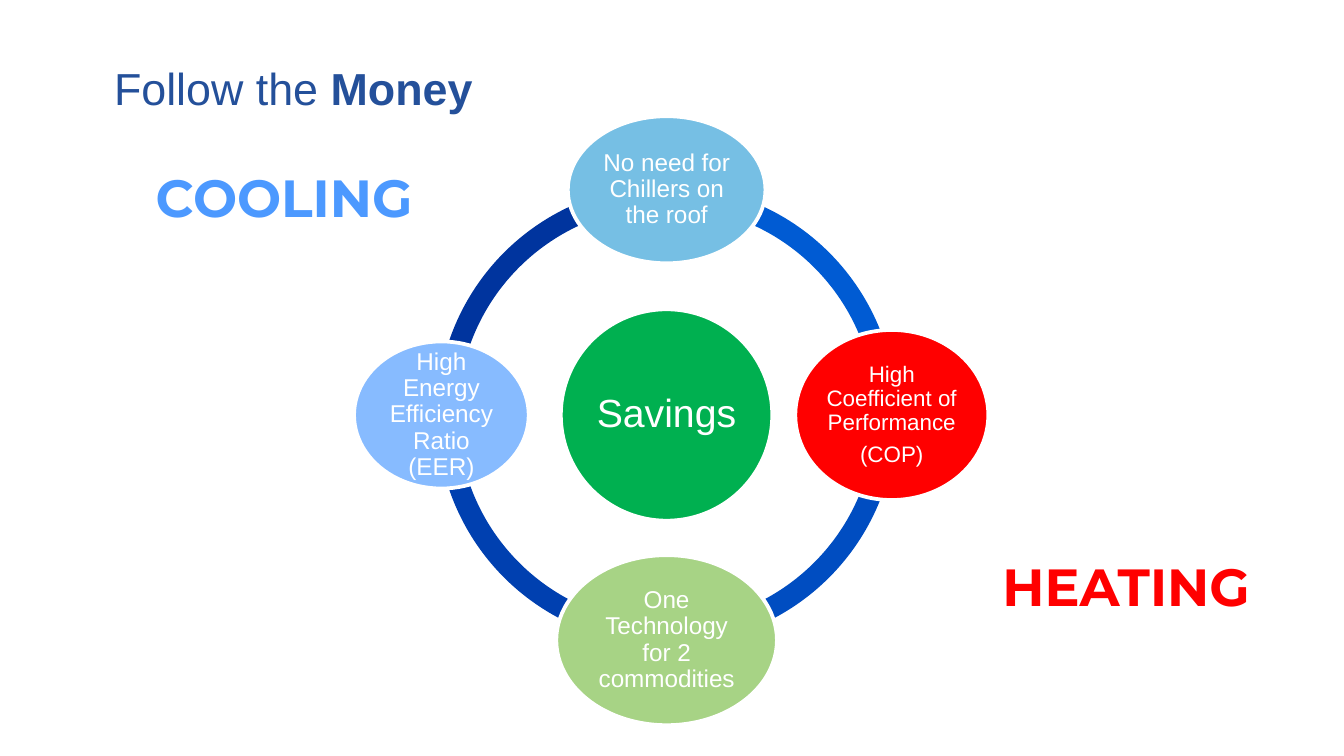
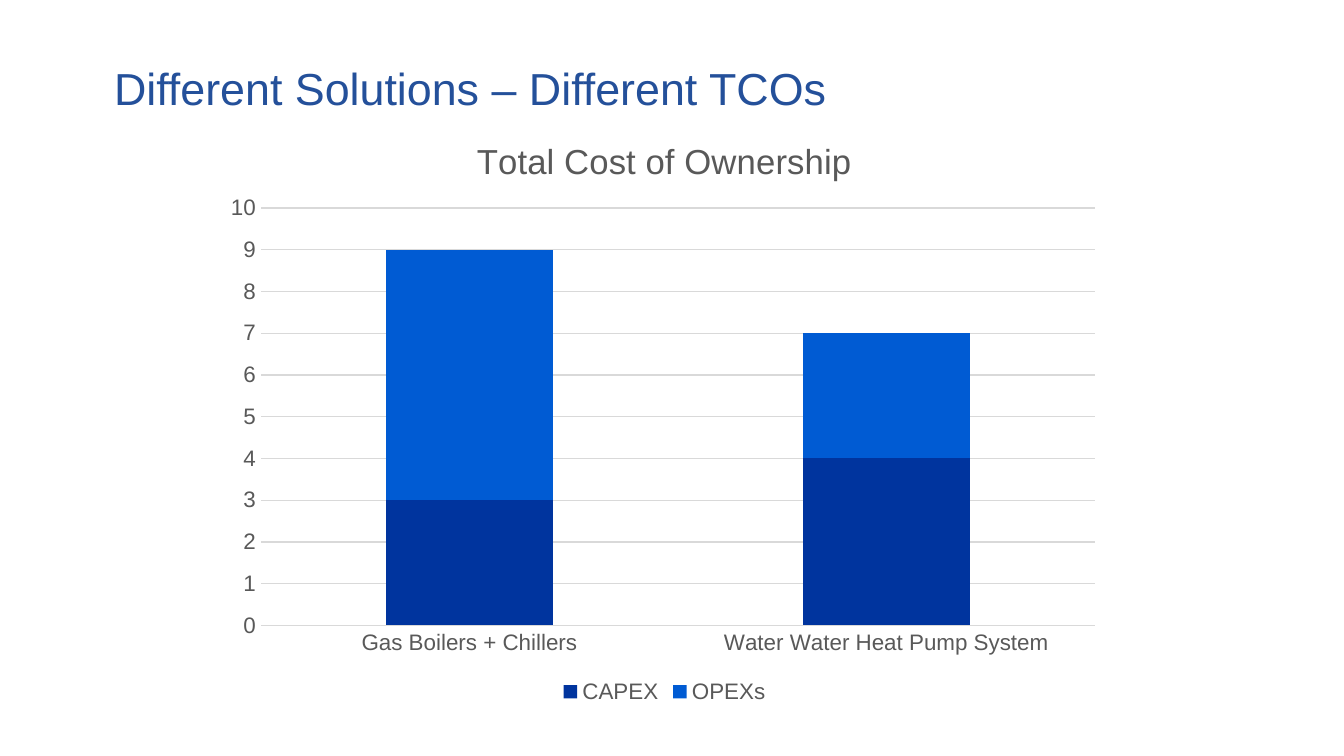
from math import cos, radians, sin

from lxml import etree
from pptx import Presentation
from pptx.chart.data import CategoryChartData
from pptx.dml.color import RGBColor
from pptx.enum.chart import XL_CHART_TYPE, XL_LEGEND_POSITION, XL_TICK_MARK
from pptx.enum.shapes import MSO_SHAPE
from pptx.enum.text import MSO_ANCHOR, PP_ALIGN
from pptx.oxml.ns import qn
from pptx.util import Inches, Pt

WIDE, HIGH = Inches(10), Inches(5.625)

WHITE = RGBColor(0xFF, 0xFF, 0xFF)
TITLE = RGBColor(0x24, 0x50, 0x9A)
NAVY = RGBColor(0x00, 0x34, 0x9E)
COBALT = RGBColor(0x00, 0x40, 0xB0)
ROYAL = RGBColor(0x00, 0x4D, 0xC1)
BLUE = RGBColor(0x00, 0x5B, 0xD3)
SKY = RGBColor(0x76, 0xBF, 0xE4)
PALE = RGBColor(0x87, 0xBB, 0xFF)
COOL = RGBColor(0x4C, 0x99, 0xFF)
RED = RGBColor(0xFF, 0x00, 0x00)
GREEN = RGBColor(0x00, 0xB0, 0x50)
LIME = RGBColor(0xA7, 0xD3, 0x85)
GREY = RGBColor(0x59, 0x59, 0x59)
RULE = RGBColor(0xD9, 0xD9, 0xD9)

BODY, HEAD = "Arial", "Montserrat"

# Boxes in percent of the slide: left, top, width, height
TITLE_BOX = (7.5, 6.6, 63.5, 10)
RING_BOX = (32.5, 24.5, 34.2, 60.8)
COOL_BOX = (10.6, 21, 22.8, 10.1)
HEAT_BOX = (73.6, 72.4, 22.8, 10.1)
CHART_BOX = (16.1, 14.9, 66.7, 78.9)

# Arcs: start angle in degrees, colour
ARCS = [(180, NAVY), (90, COBALT), (0, ROYAL), (270, BLUE)]
ORBIT = 0.49

# Nodes: angle, width and height as shares of the ring, colour, size, lines
NODES = [
    (-90, 0.43, 0.32, SKY, 13, ["No need for Chillers on the roof"]),
    (0, 0.42, 0.37, RED, 12, ["High Coefficient of Performance", "(COP)"]),
    (90, 0.48, 0.37, LIME, 13, ["One Technology for 2 commodities"]),
    (180, 0.38, 0.32, PALE, 13, ["High Energy Efficiency Ratio (EER)"]),
]


def place(box):
    """Turn percent of the slide into lengths."""
    left, top, width, height = box
    return (int(WIDE * left / 100), int(HIGH * top / 100),
            int(WIDE * width / 100), int(HIGH * height / 100))


def style(font, size, color, name=BODY, bold=False):
    font.size, font.name, font.bold = Pt(size), name, bold
    font.color.rgb = color


def add_run(para, text, *look, **more):
    run = para.add_run()
    run.text = text
    style(run.font, *look, **more)


def add_text(slide, box, runs, size, color, name=BODY):
    frame = slide.shapes.add_textbox(*place(box)).text_frame
    frame.word_wrap = True
    frame.vertical_anchor = MSO_ANCHOR.MIDDLE
    for text, bold in runs:
        add_run(frame.paragraphs[0], text, size, color, name, bold)


def add_slide(deck, runs):
    slide = deck.slides.add_slide(deck.slide_layouts[6])
    add_text(slide, TITLE_BOX, runs, 24, TITLE)
    return slide


def add_form(group, kind, box, color):
    form = group.shapes.add_shape(kind, *box)
    form.shadow.inherit = False
    form.fill.solid()
    form.fill.fore_color.rgb = color
    form.line.fill.background()
    return form


def add_node(group, mid, size, color, points, lines, inset=0.02):
    (mid_x, mid_y), (width, height) = mid, size
    box = [int(n) for n in (mid_x - width / 2, mid_y - height / 2, width, height)]
    node = add_form(group, MSO_SHAPE.OVAL, box, color)
    node.line.color.rgb = WHITE
    node.line.width = Pt(2)
    frame = node.text_frame
    frame.word_wrap = True
    frame.vertical_anchor = MSO_ANCHOR.MIDDLE
    frame.margin_left = frame.margin_right = Inches(inset)
    frame.margin_top = frame.margin_bottom = Inches(inset)
    for rank, line in enumerate(lines):
        para = frame.add_paragraph() if rank else frame.paragraphs[0]
        para.alignment = PP_ALIGN.CENTER
        para.line_spacing = 0.9
        para.space_after = Pt(points * 0.35)
        add_run(para, line, points, WHITE)


def add_ring(slide, box):
    left, top, side, _ = place(box)
    group = slide.shapes.add_group_shape()
    mid_x, mid_y = left + side / 2, top + side / 2

    # Quarter arcs; angles are stored in 60000ths of a degree
    for start, color in ARCS:
        arc = add_form(group, MSO_SHAPE.BLOCK_ARC, (left, top, side, side), color)
        arc.adjustments[0] = start * 0.6
        arc.adjustments[1] = (start + 90) % 360 * 0.6
        arc.adjustments[2] = 0.046

    # Hub, then the nodes around it
    add_node(group, (mid_x, mid_y), (side * 0.46, side * 0.46),
             GREEN, 21, ["Savings"], 0.03)
    for angle, width, height, color, points, lines in NODES:
        turn = radians(angle)
        mid = (mid_x + side * ORBIT * cos(turn), mid_y + side * ORBIT * sin(turn))
        add_node(group, mid, (side * width, side * height), color, points, lines)


def set_plot(chart, **shares):
    """Fix the inner plot area as shares of the chart."""
    area = chart.element.find(".//" + qn("c:plotArea"))
    for old in area.findall(qn("c:layout")):
        area.remove(old)
    layout = etree.Element(qn("c:layout"))
    area.insert(0, layout)
    manual = etree.SubElement(layout, qn("c:manualLayout"))
    parts = {"layoutTarget": "inner", "xMode": "edge", "yMode": "edge", **shares}
    for tag, value in parts.items():
        etree.SubElement(manual, qn("c:" + tag)).set("val", str(value))


def add_costs(slide, box):
    data = CategoryChartData()
    data.categories = ["Gas Boilers + Chillers", "Water Water Heat Pump System"]
    data.add_series("CAPEX", (3, 4))
    data.add_series("OPEXs", (6, 3))
    chart = slide.shapes.add_chart(
        XL_CHART_TYPE.COLUMN_STACKED, *place(box), data).chart
    chart.font.name, chart.font.size = BODY, Pt(10)

    # Title and legend
    chart.has_title = True
    add_run(chart.chart_title.text_frame.paragraphs[0],
            "Total Cost of Ownership", 18.6, GREY)
    chart.chart_title.include_in_layout = False
    chart.has_legend = True
    chart.legend.position = XL_LEGEND_POSITION.BOTTOM
    chart.legend.include_in_layout = False
    style(chart.legend.font, 12, GREY)

    # Columns
    plot = chart.plots[0]
    plot.gap_width, plot.overlap = 150, 100
    plot.vary_by_categories = False
    for series, color in zip(plot.series, (NAVY, BLUE)):
        series.format.fill.solid()
        series.format.fill.fore_color.rgb = color

    # Axes
    cats, vals = chart.category_axis, chart.value_axis
    for axis in (cats, vals):
        axis.major_tick_mark = axis.minor_tick_mark = XL_TICK_MARK.NONE
        style(axis.tick_labels.font, 12, GREY)
    vals.minimum_scale, vals.maximum_scale, vals.major_unit = 0, 10, 1
    vals.has_major_gridlines = True
    vals.format.line.fill.background()
    for line in (cats.format.line, vals.major_gridlines.format.line):
        line.color.rgb = RULE
        line.width = Pt(0.75)
    set_plot(chart, x=0.05, y=0.16, w=0.93, h=0.7)


def main():
    deck = Presentation()
    deck.slide_width, deck.slide_height = WIDE, HIGH

    money = add_slide(deck, [("Follow the ", False), ("Money", True)])
    add_ring(money, RING_BOX)
    add_text(money, COOL_BOX, [("COOLING", True)], 28, COOL, HEAD)
    add_text(money, HEAT_BOX, [("HEATING", True)], 28, RED, HEAD)

    costs = add_slide(deck, [("Different Solutions – Different TCOs", False)])
    add_costs(costs, CHART_BOX)

    deck.save("out.pptx")


if __name__ == "__main__":
    main()
